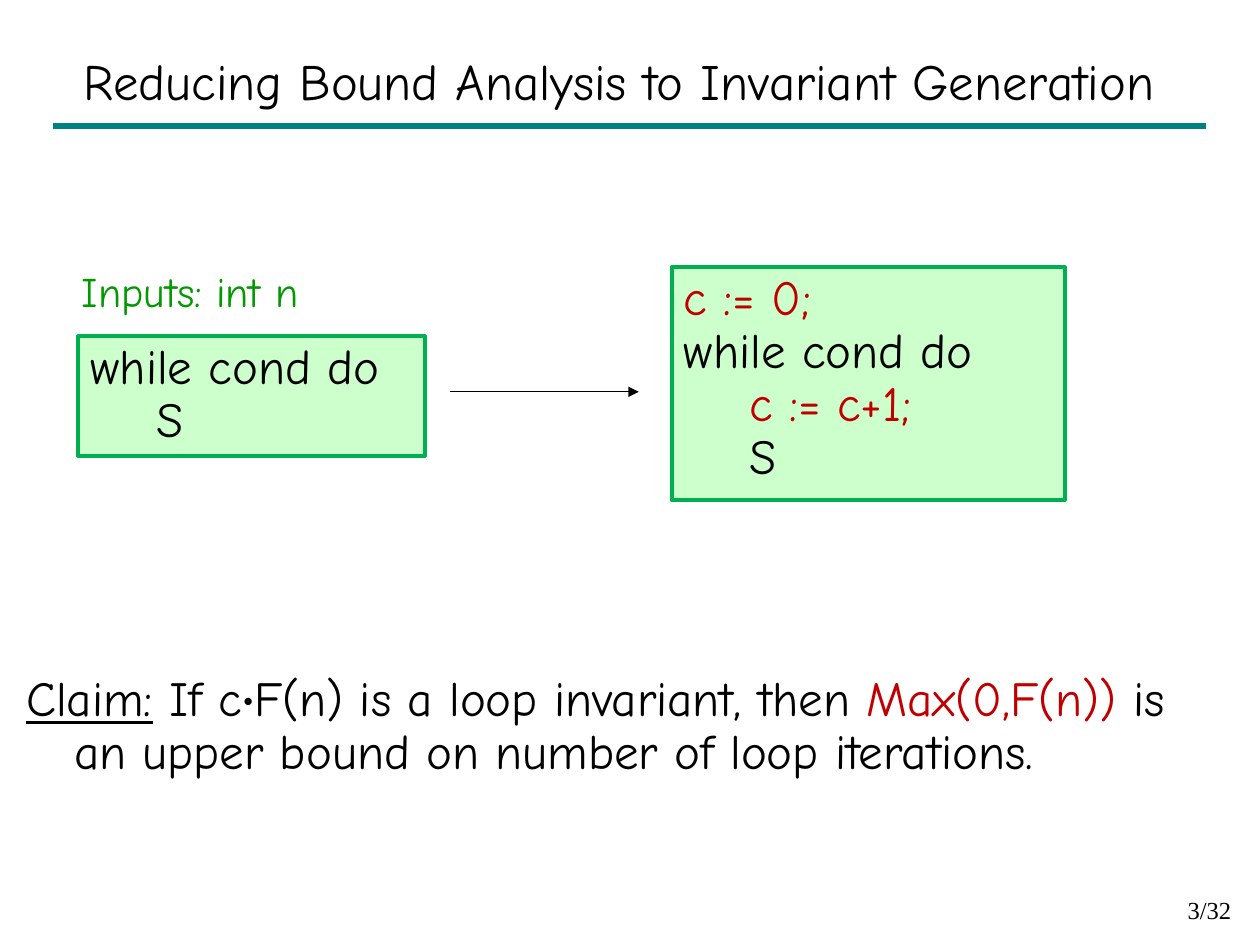
"""Build the slide on reducing bound analysis to invariant generation."""
from lxml import etree
from pptx import Presentation
from pptx import util as u
from pptx.dml.color import RGBColor
from pptx.enum import shapes, text
from pptx.oxml import ns

BLACK = RGBColor(0x00, 0x00, 0x00)
RED = RGBColor(0xC0, 0x00, 0x00)
GREEN = RGBColor(0x00, 0x99, 0x00)
TEAL = RGBColor(0x00, 0x80, 0x80)
BOX_FILL = RGBColor(0xCC, 0xFF, 0xCC)
BOX_LINE = RGBColor(0x00, 0xB0, 0x50)
FONT = "Comic Neue"
CODE_INDENT = 0.52
HANGING = 0.38

TITLE = "Reducing Bound Analysis to Invariant Generation "
PROGRAMS = [
    ((0.62, 2.67, 2.75, 0.95), [("while cond do", 0, BLACK), ("S", 1, BLACK)]),
    ((5.33, 2.12, 3.12, 1.85), [
        ("c := 0;", 0, RED),
        ("while cond do", 0, BLACK),
        ("c := c+1;", 1, RED),
        ("S", 1, BLACK),
    ]),
]
CLAIM = [
    ("Claim:", BLACK, FONT, True),
    (" If c", BLACK, FONT, False),
    ("·", BLACK, "Lato", False),
    ("F(n) is a loop invariant, then ", BLACK, FONT, False),
    ("Max(0,F(n)) ", RED, FONT, False),
    ("is an upper bound on number of loop iterations.", BLACK, FONT, False),
]


def add_span(para, words, size, color=BLACK, font=FONT, underline=False):
    span = para.add_run()
    span.text = words
    span.font.size = u.Pt(size)
    span.font.name = font
    span.font.color.rgb = color
    if underline:
        span.font.underline = True


def add_text(page, place, align=text.PP_ALIGN.LEFT, anchor=text.MSO_ANCHOR.TOP):
    frame = page.shapes.add_textbox(*map(u.Inches, place)).text_frame
    frame.word_wrap = True
    frame.vertical_anchor = anchor
    para = frame.paragraphs[0]
    para.alignment = align
    return para


def add_program(page, place, lines):
    box = page.shapes.add_shape(shapes.MSO_SHAPE.RECTANGLE, *map(u.Inches, place))
    box.shadow.inherit = False
    box.fill.solid()
    box.fill.fore_color.rgb = BOX_FILL
    box.line.color.rgb = BOX_LINE
    box.line.width = u.Pt(2.25)
    frame = box.text_frame
    frame.word_wrap = True
    frame.vertical_anchor = text.MSO_ANCHOR.TOP
    for index, (words, level, color) in enumerate(lines):
        para = frame.add_paragraph() if index else frame.paragraphs[0]
        para.alignment = text.PP_ALIGN.LEFT
        para.line_spacing = 0.9
        para._p.get_or_add_pPr().set("marL", str(u.Inches(CODE_INDENT * level)))
        add_span(para, words, 28, color)


def add_line(page, left, right, top, color, width, arrow=False):
    line = page.shapes.add_connector(
        shapes.MSO_CONNECTOR.STRAIGHT, *map(u.Inches, (left, top, right, top)))
    line.line.color.rgb = color
    line.line.width = u.Pt(width)
    if arrow:
        etree.SubElement(line.line._get_or_add_ln(), ns.qn("a:tailEnd"), type="triangle")
    etree.SubElement(line._element.spPr, ns.qn("a:effectLst"))


def main():
    deck = Presentation()
    deck.slide_width, deck.slide_height = u.Inches(10), u.Inches(7.5)
    page = deck.slides.add_slide(deck.slide_layouts[6])

    add_line(page, 0.42, 9.57, 1, TEAL, 4)
    number = add_text(page, (7.79, 7.05, 2.08, 0.42), text.PP_ALIGN.RIGHT)
    add_span(number, "3/32", 14, font="Times New Roman")

    for place, lines in PROGRAMS:
        add_program(page, place, lines)
    add_line(page, 3.57, 5.07, 3.11, BLACK, 0.75, arrow=True)

    claim = add_text(page, (0.11, 5.3, 9.75, 1.12))
    claim.line_spacing = 0.9
    properties = claim._p.get_or_add_pPr()
    properties.set("marL", str(u.Inches(HANGING)))
    properties.set("indent", str(u.Inches(-HANGING)))
    for words, color, font, underline in CLAIM:
        add_span(claim, words, 28, color, font, underline)

    title = add_text(page, (-0.11, 0.3, 10.19, 0.67),
                     text.PP_ALIGN.CENTER, text.MSO_ANCHOR.MIDDLE)
    add_span(title, TITLE, 29)
    inputs = add_text(page, (0.55, 2.06, 2.46, 0.5))
    add_span(inputs, "Inputs: int n", 24, GREEN)

    deck.save("out.pptx")


if __name__ == "__main__":
    main()
